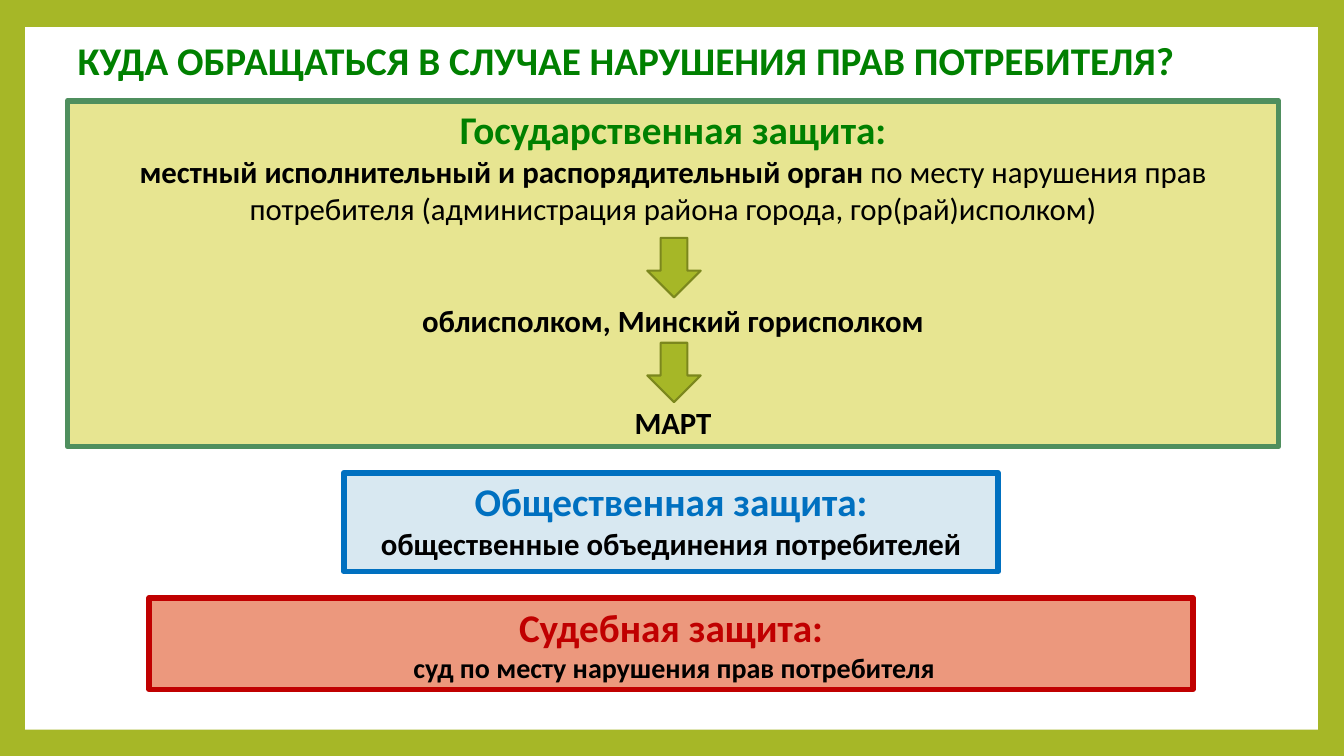
from dataclasses import dataclass

import pptx
import pptx.dml.color
import pptx.enum.shapes
import pptx.enum.text
import pptx.util

Inches = pptx.util.Inches
Pt = pptx.util.Pt
MSO_SHAPE = pptx.enum.shapes.MSO_SHAPE
MSO_ANCHOR = pptx.enum.text.MSO_ANCHOR
PP_ALIGN = pptx.enum.text.PP_ALIGN

COLORS = {
    "frame": "A6B727",
    "arrow_line": "7B871D",
    "white": "FFFFFF",
    "black": "000000",
    "green": "008000",
    "state_fill": "E7E591",
    "state_line": "4F8F5E",
    "public_fill": "D8E8F1",
    "public_line": "0070C0",
    "court_fill": "EC987D",
    "court_line": "C00000",
}


@dataclass
class TextRun:
    text: str
    size: float = 22
    color: str = "black"
    bold: bool = True


@dataclass
class Line:
    runs: list[TextRun]
    space_before: float = 0


@dataclass
class Box:
    left: float
    top: float
    width: float
    height: float
    fill: str
    line: str
    lines: list[Line]
    anchor: MSO_ANCHOR = MSO_ANCHOR.TOP


def heading(text: str, color: str) -> Line:
    return Line([TextRun(text, 28, color)])


BOXES = [
    Box(0.67, 1, 12.01, 3.43, "state_fill", "state_line", [
        heading("Государственная защита:", "green"),
        Line([
            TextRun("местный исполнительный и распорядительный орган "),
            TextRun("по месту нарушения прав потребителя "
                    "(администрация района города, гор(рай)исполком)", bold=False),
        ]),
        Line([TextRun("облисполком, Минский горисполком")], space_before=53.7),
        Line([TextRun("МАРТ")], space_before=46.4),
    ]),
    Box(3.41, 4.69, 6.49, 0.98, "public_fill", "public_line", [
        heading("Общественная защита:", "public_line"),
        Line([TextRun("общественные объединения потребителей")]),
    ]),
    Box(1.48, 5.93, 10.35, 0.91, "court_fill", "court_line", [
        heading("Судебная защита:", "court_line"),
        Line([TextRun(" суд по месту нарушения прав потребителя", 20)]),
    ], MSO_ANCHOR.MIDDLE),
]
ARROW_TOPS = [2.36, 3.4]


def rgb(name: str) -> pptx.dml.color.RGBColor:
    return pptx.dml.color.RGBColor.from_string(COLORS[name])


def add_run(paragraph, text_run: TextRun) -> None:
    run = paragraph.add_run()
    run.text = text_run.text
    font_format = {"name": "Calibri", "size": Pt(text_run.size), "bold": text_run.bold}
    for attribute, value in font_format.items():
        setattr(run.font, attribute, value)
    run.font.color.rgb = rgb(text_run.color)


def add_filled_shape(slide, kind: MSO_SHAPE, position: tuple[float, ...], fill: str,
                     line: str | None = None, line_width: float = 0):
    shape = slide.shapes.add_shape(kind, *map(Inches, position))
    shape.shadow.inherit = False
    shape.fill.solid()
    shape.fill.fore_color.rgb = rgb(fill)
    if line is None:
        shape.line.fill.background()
    else:
        shape.line.color.rgb = rgb(line)
        shape.line.width = Pt(line_width)
    return shape


def add_box(slide, box: Box) -> None:
    position = (box.left, box.top, box.width, box.height)
    shape = add_filled_shape(slide, MSO_SHAPE.RECTANGLE, position, box.fill, box.line, 4)
    frame = shape.text_frame
    frame.word_wrap = True
    frame.vertical_anchor = box.anchor
    for index, line in enumerate(box.lines):
        paragraph = frame.add_paragraph() if index else frame.paragraphs[0]
        paragraph.alignment = PP_ALIGN.CENTER
        paragraph.space_before = Pt(line.space_before)
        for text_run in line.runs:
            add_run(paragraph, text_run)


def format_title(title) -> None:
    position = {"left": 0.67, "top": 0.33, "width": 12.41, "height": 0.59}
    for attribute, value in position.items():
        setattr(title, attribute, Inches(value))
    frame_format = {
        "word_wrap": True,
        "vertical_anchor": MSO_ANCHOR.MIDDLE,
        "auto_size": pptx.enum.text.MSO_AUTO_SIZE.NONE,
    }
    for attribute, value in frame_format.items():
        setattr(title.text_frame, attribute, value)
    paragraph = title.text_frame.paragraphs[0]
    paragraph.alignment = PP_ALIGN.LEFT
    paragraph.line_spacing = 0.9
    add_run(paragraph, TextRun("КУДА ОБРАЩАТЬСЯ В СЛУЧАЕ НАРУШЕНИЯ ПРАВ ПОТРЕБИТЕЛЯ?",
                               28, "green"))


def main() -> None:
    presentation = pptx.Presentation()
    presentation.slide_width = Inches(13.33)
    presentation.slide_height = Inches(7.5)
    slide = presentation.slides.add_slide(presentation.slide_layouts.get_by_name("Title Only"))

    # Green frame around a white panel, with the title in front
    slide.background.fill.solid()
    slide.background.fill.fore_color.rgb = rgb("frame")
    panel = add_filled_shape(slide, MSO_SHAPE.RECTANGLE, (0.25, 0.27, 12.82, 6.97), "white")
    title = slide.shapes.title
    title.element.addprevious(panel.element)
    format_title(title)

    # Three kinds of protection
    for box in BOXES:
        add_box(slide, box)

    # Steps inside the state protection box
    for top in ARROW_TOPS:
        add_filled_shape(slide, MSO_SHAPE.DOWN_ARROW, (6.42, top, 0.53, 0.59),
                         "frame", "arrow_line", 1.5)

    presentation.save("out.pptx")


if __name__ == "__main__":
    main()
